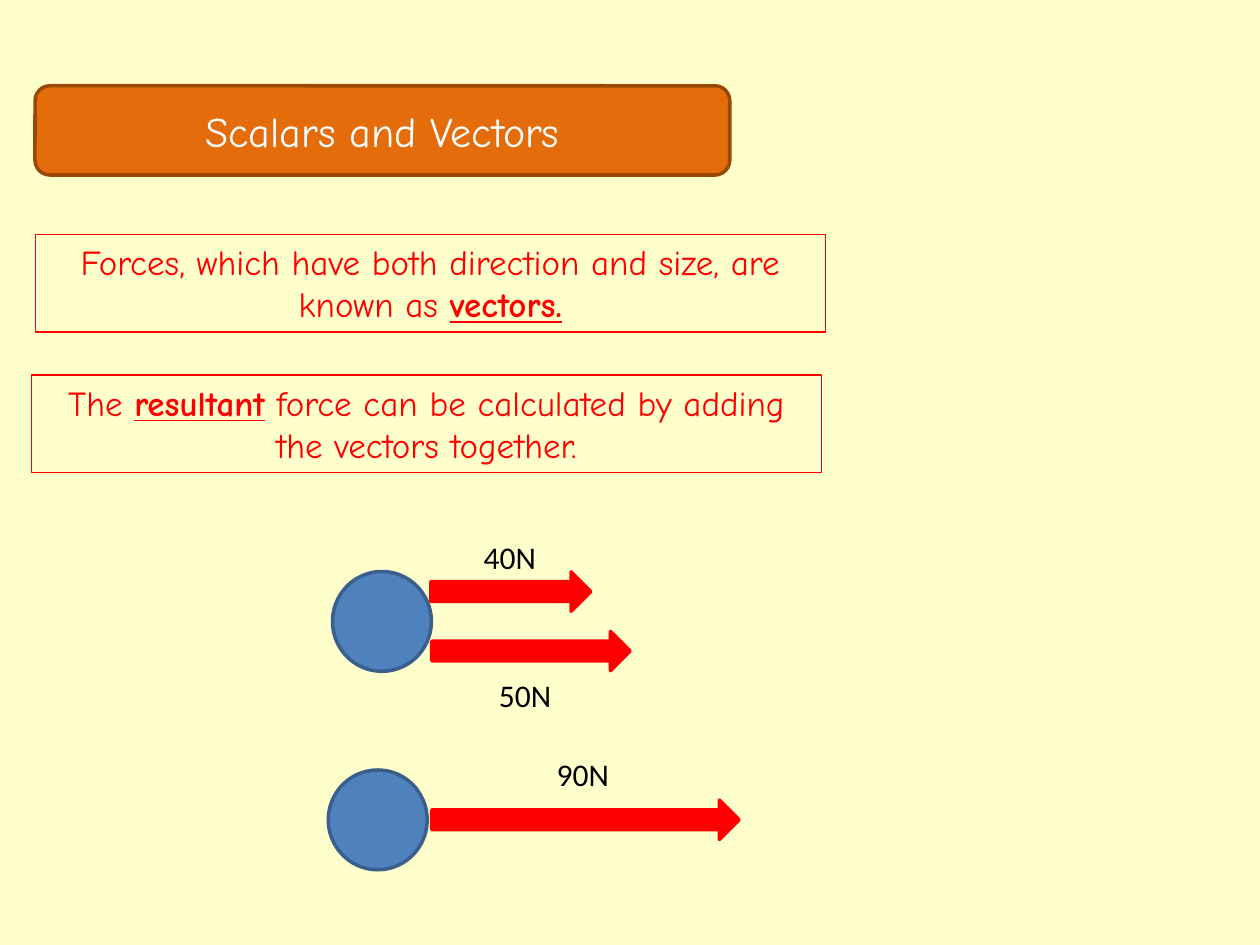
from pptx import Presentation
from pptx.dml.color import RGBColor
from pptx.enum.shapes import MSO_SHAPE as SHAPE
from pptx.enum.text import MSO_ANCHOR as ANCHOR, PP_ALIGN as ALIGN
from pptx.util import Pt

CREAM, ORANGE, BROWN = "FFFFCC", "E46C0A", "984807"
RED, BLUE, NAVY = "FF0000", "4F81BD", "3A5F8C"
WHITE, BLACK = "FFFFFF", "000000"
HAND, SANS = "Comic Neue", "Calibri"
W, H = 720, 540


def rgb(value):
    return RGBColor.from_string(value)


def add_shape(s, kind, box, fill=None, line=None, width=2):
    sp = s.shapes.add_shape(kind, *map(Pt, box))
    sp.shadow.inherit = False
    if fill:
        sp.fill.solid()
        sp.fill.fore_color.rgb = rgb(fill)
    else:
        sp.fill.background()
    if line:
        sp.line.color.rgb = rgb(line)
        sp.line.width = Pt(width)
    else:
        sp.line.fill.background()
    return sp


def add_text(sp, text, key=None, size=18, font=SANS, color=BLACK,
             align=ALIGN.LEFT, anchor=ANCHOR.TOP):
    """Write text in sp; the word given as key is bold and underlined."""
    tf = sp.text_frame
    tf.word_wrap = True
    tf.vertical_anchor = anchor
    p = tf.paragraphs[0]
    p.alignment = align
    before, found, after = text.partition(key) if key else (text, "", "")
    for part in filter(None, (before, found, after)):
        r = p.add_run()
        r.text = part
        r.font.size = Pt(size)
        r.font.name = font
        r.font.color.rgb = rgb(color)
        r.font.bold = r.font.underline = part == key


def add_title(s, box, text):
    sp = add_shape(s, SHAPE.ROUNDED_RECTANGLE, box, ORANGE, BROWN)
    add_text(sp, text, size=24, font=HAND, color=WHITE,
             align=ALIGN.CENTER, anchor=ANCHOR.MIDDLE)


def add_statement(s, box, text, key):
    sp = add_shape(s, SHAPE.RECTANGLE, box, line=RED, width=0.75)
    add_text(sp, text, key, size=20, font=HAND, color=RED, align=ALIGN.CENTER)


def add_forces(s, box, forces):
    """Draw a ball in box and its forces: label, arrow offset and length, label offset."""
    left, top, width, height = box
    add_shape(s, SHAPE.OVAL, box, BLUE, NAVY)
    for label, (x, y), length, (label_x, label_y) in forces:
        add_shape(s, SHAPE.RIGHT_ARROW, (left + x, top + y, length, 22.5), RED, RED)
        tb = s.shapes.add_textbox(Pt(left + label_x), Pt(top + label_y), Pt(51), Pt(29))
        add_text(tb, label)


def main():
    prs = Presentation()
    prs.slide_width, prs.slide_height = Pt(W), Pt(H)
    s = prs.slides.add_slide(prs.slide_layouts[6])

    # Background and title
    add_shape(s, SHAPE.RECTANGLE, (0, 0, W, H), CREAM)
    add_title(s, (20, 49, 397, 51), "Scalars and Vectors")

    # Statements
    add_statement(s, (20.2, 134, 451.5, 55.7),
                  "Forces, which have both direction and size, are known as vectors.",
                  "vectors.")
    add_statement(s, (18, 214.3, 451.5, 55.7),
                  "The resultant force can be calculated by adding the vectors together.",
                  "resultant")

    # Two forces, then their resultant
    add_forces(s, (190, 326.6, 56.5, 57), [
        ("40N", (56.2, 0.2), 91.4, (79.3, -22.8)),
        ("50N", (56.7, 34.2), 113.4, (88, 56.4)),
    ])
    add_forces(s, (187.6, 440, 56.5, 57), [
        ("90N", (59.1, 17.2), 175.7, (123.4, -12.4)),
    ])

    prs.save("out.pptx")


if __name__ == "__main__":
    main()
